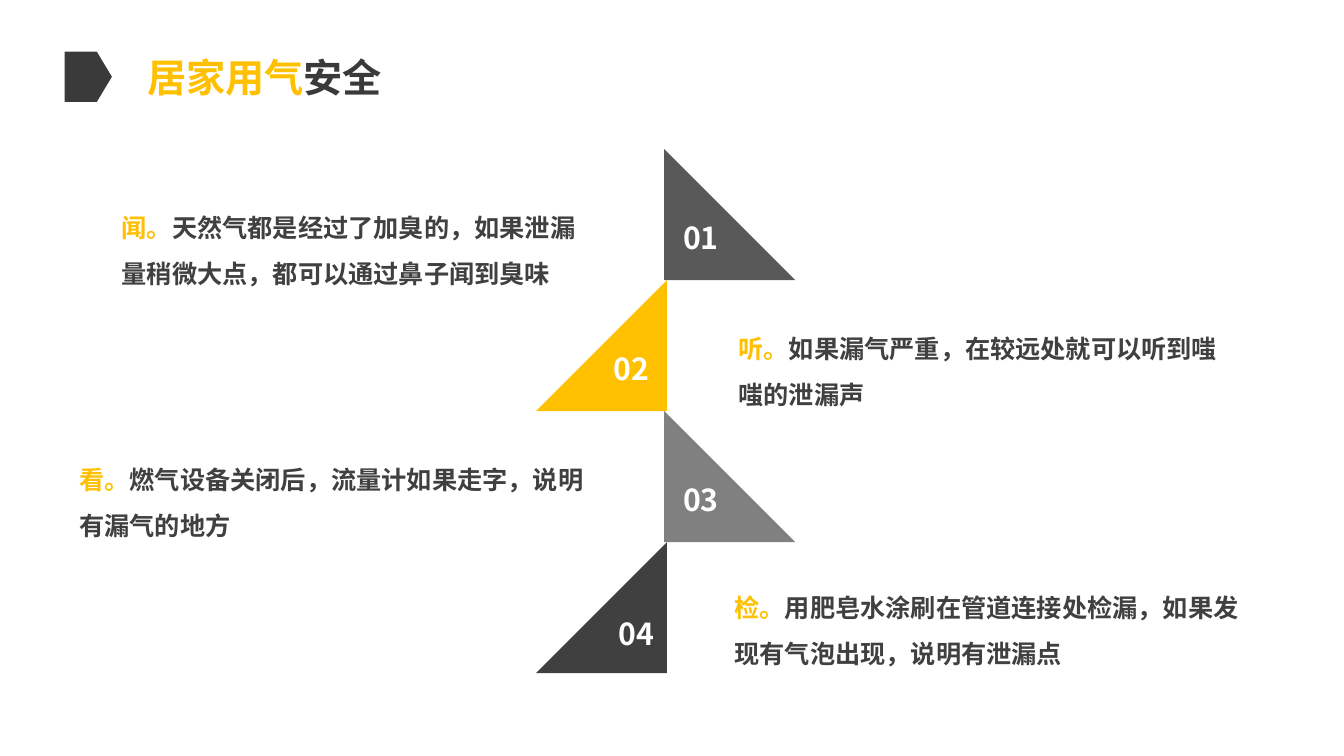
from lxml.etree import SubElement
from pptx import Presentation
from pptx.dml.color import RGBColor
from pptx.enum.shapes import MSO_SHAPE
from pptx.enum.text import MSO_ANCHOR, MSO_AUTO_SIZE, PP_ALIGN
from pptx.oxml.ns import qn
from pptx.util import Cm, Pt

FONT = "Noto Sans CJK SC"
COLORS = {
    "accent": "FFC001",
    "title": "3A3A3A",
    "body": "404040",
    "number": "FFFFFF",
    "step1": "595959",
    "step2": "FFC000",
    "step3": "808080",
    "step4": "404040",
}
TITLE = [("居家用气", "accent"), ("安全", "title")]
STEPS = [
    {"number": "01", "color": "step1", "number_at": (16.94, 5.41), "tip_box": (2.82, 4.85, 12.5),
     "key": "闻。", "tip": "天然气都是经过了加臭的，如果泄漏量稍微大点，都可以通过鼻子闻到臭味"},
    {"number": "02", "color": "step2", "number_at": (15.19, 8.69), "tip_box": (18.36, 7.9, 13.13),
     "key": "听。", "tip": "如果漏气严重，在较远处就可以听到嗤嗤的泄漏声"},
    {"number": "03", "color": "step3", "number_at": (16.94, 12.01), "tip_box": (1.75, 11.2, 13.46),
     "key": "看。", "tip": "燃气设备关闭后，流量计如果走字，说明有漏气的地方"},
    {"number": "04", "color": "step4", "number_at": (15.32, 15.37), "tip_box": (18.26, 14.43, 13.82),
     "key": "检。", "tip": "用肥皂水涂刷在管道连接处检漏，如果发现有气泡出现，说明有泄漏点"},
]
TRIANGLE_SIDE = 3.3
TRIANGLE_TOP = 3.76
RIGHT_LEFT, LEFT_LEFT = 16.74, 13.51
NUMBER_SIZE = (1.45, 1.17)
TIP_HEIGHT = 2.57


def rgb(color):
    return RGBColor.from_string(COLORS[color])


def add_runs(paragraph, parts, size):
    for text, color in parts:
        run = paragraph.add_run()
        run.text = text
        run.font.size = Pt(size)
        run.font.bold = True
        run.font.name = FONT
        run.font.color.rgb = rgb(color)
        SubElement(run.font._element, qn("a:ea")).set("typeface", FONT)


def add_solid(slide, preset, box, color):
    solid = slide.shapes.add_shape(preset, *map(Cm, box))
    solid.shadow.inherit = False
    solid.fill.solid()
    solid.fill.fore_color.rgb = rgb(color)
    solid.line.fill.background()
    return solid


def add_text(slide, box, parts, size, wrap):
    frame = slide.shapes.add_textbox(*map(Cm, box)).text_frame
    frame.word_wrap = wrap
    frame.auto_size = MSO_AUTO_SIZE.SHAPE_TO_FIT_TEXT
    add_runs(frame.paragraphs[0], parts, size)
    return frame.paragraphs[0]


def add_step(slide, index, step):
    points_left = index % 2 == 1
    left = LEFT_LEFT if points_left else RIGHT_LEFT
    top = TRIANGLE_TOP + index * TRIANGLE_SIDE
    triangle = add_solid(slide, MSO_SHAPE.RIGHT_TRIANGLE,
                         (left, top, TRIANGLE_SIDE, TRIANGLE_SIDE), step["color"])
    if points_left:
        triangle._element.spPr.get_or_add_xfrm().set("flipH", "1")
    number = add_text(slide, step["number_at"] + NUMBER_SIZE,
                      [(step["number"], "number")], 21.6, False)
    number.alignment = PP_ALIGN.CENTER
    tip = add_text(slide, step["tip_box"] + (TIP_HEIGHT,),
                   [(step["key"], "accent"), (step["tip"], "body")], 18, True)
    tip.line_spacing = 1.5


def add_title(slide):
    marker = add_solid(slide, MSO_SHAPE.PENTAGON, (1.63, 1.3, 1.19, 1.27), "title")
    marker.adjustments[0] = 0.32
    title = slide.shapes.title
    title.left, title.top, title.width, title.height = map(Cm, (1.63, 1.22, 10.08, 1.45))
    frame = title.text_frame
    frame.word_wrap = True
    frame.auto_size = MSO_AUTO_SIZE.SHAPE_TO_FIT_TEXT
    frame.vertical_anchor = MSO_ANCHOR.TOP
    frame.paragraphs[0].alignment = PP_ALIGN.CENTER
    add_runs(frame.paragraphs[0], TITLE, 28)


def main():
    deck = Presentation()
    deck.slide_width, deck.slide_height = Cm(33.87), Cm(19.05)
    slide = deck.slides.add_slide(deck.slide_layouts[5])
    add_title(slide)
    for index, step in enumerate(STEPS):
        add_step(slide, index, step)
    deck.save("out.pptx")


if __name__ == "__main__":
    main()
